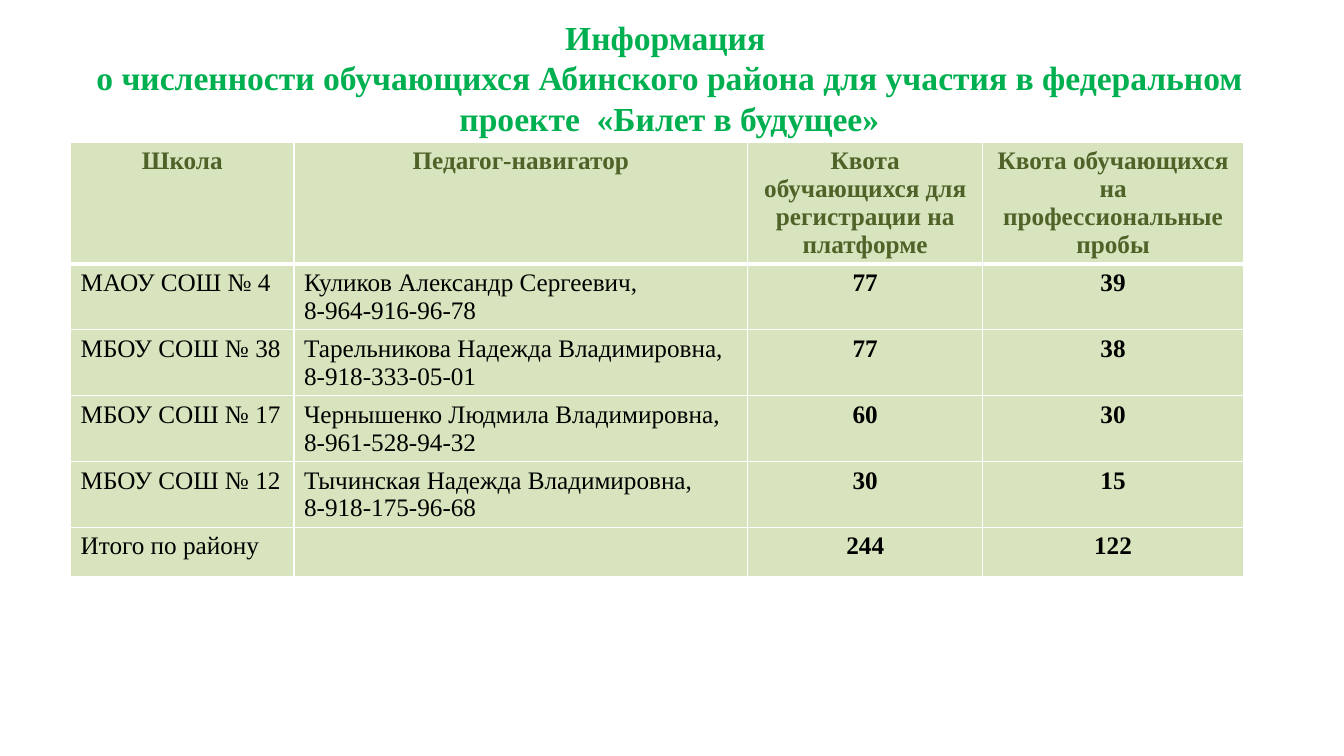
import lxml.etree
import pptx
import pptx.util
import pptx.dml.color
import pptx.enum.text
import pptx.oxml.ns

Cm, Pt = pptx.util.Cm, pptx.util.Pt
ALIGN = pptx.enum.text.PP_ALIGN
FONT = "Times New Roman"
COLORS = {
    "title": "00B050", "header": "4F6228", "body": "000000",
    "cell": "D7E4BD", "border": "FFFFFF",
}

TITLE = [
    "Информация ",
    "о численности обучающихся Абинского района для участия в федеральном "
    "проекте  «Билет в будущее»",
]
HEADER = [
    "Школа",
    "Педагог-навигатор",
    "Квота обучающихся для регистрации на платформе",
    "Квота обучающихся на профессиональные пробы",
]
SCHOOLS = [
    ["МАОУ СОШ № 4", "Куликов Александр Сергеевич,\n8-964-916-96-78", "77", "39"],
    ["МБОУ СОШ № 38", "Тарельникова Надежда Владимировна,\n8-918-333-05-01", "77", "38"],
    ["МБОУ СОШ № 17", "Чернышенко Людмила Владимировна,\n8-961-528-94-32", "60", "30"],
    ["МБОУ СОШ № 12", "Тычинская Надежда Владимировна,\n8-918-175-96-68", "30", "15"],
    ["Итого по району", "", "244", "122"],
]
COLUMN_WIDTHS = [5.63, 11.43, 5.93, 6.56]
HEADER_HEIGHT, ROW_HEIGHT = 2.34, 1.24
FIRST_QUOTA_COLUMN = 2


def rgb(name):
    return pptx.dml.color.RGBColor.from_string(COLORS[name])


def add_span(para, text, size, color, bold):
    span = para.add_run()
    span.text = text
    span.font.name = FONT
    span.font.size = Pt(size)
    span.font.bold = bold
    span.font.color.rgb = rgb(color)


def fill_title(box):
    box.left, box.top, box.width, box.height = Cm(1.02), Cm(0.43), Cm(31.7), Cm(3.07)
    frame = box.text_frame
    frame.margin_left = frame.margin_top = frame.margin_right = frame.margin_bottom = 0
    frame.vertical_anchor = pptx.enum.text.MSO_ANCHOR.TOP
    frame.word_wrap = True
    para = frame.paragraphs[0]
    para.alignment = ALIGN.CENTER
    for number, line in enumerate(TITLE):
        if number:
            para.add_line_break()
        add_span(para, line, 24, "title", True)


def set_borders(cell, widths):
    """Draw the cell's edges; widths maps lnL, lnR, lnT, lnB, in that order, to points."""
    qn = pptx.oxml.ns.qn
    properties = cell._tc.get_or_add_tcPr()
    for position, (edge, width) in enumerate(widths.items()):
        line = lxml.etree.Element(qn(f"a:{edge}"), w=str(Pt(width)))
        solid = lxml.etree.SubElement(line, qn("a:solidFill"))
        lxml.etree.SubElement(solid, qn("a:srgbClr"), val=COLORS["border"])
        properties.insert(position, line)


def fill_cell(cell, text, color, bold, centred):
    cell.fill.solid()
    cell.fill.fore_color.rgb = rgb("cell")
    if not text:
        return
    for number, line in enumerate(text.split("\n")):
        frame = cell.text_frame
        para = frame.add_paragraph() if number else frame.paragraphs[0]
        para.alignment = ALIGN.CENTER if centred else ALIGN.LEFT
        add_span(para, line, 18, color, bold)


def add_quota_table(page):
    rows = [HEADER] + SCHOOLS
    heights = [HEADER_HEIGHT] + [ROW_HEIGHT] * len(SCHOOLS)
    table = page.shapes.add_table(
        len(rows), len(HEADER), Cm(1.78), Cm(3.58),
        Cm(sum(COLUMN_WIDTHS)), Cm(sum(heights)),
    ).table
    for column, width in zip(table.columns, COLUMN_WIDTHS):
        column.width = Cm(width)
    for r, (texts, height) in enumerate(zip(rows, heights)):
        table.rows[r].height = Cm(height)
        widths = {
            "lnL": 1, "lnR": 1,
            "lnT": 3 if r == 1 else 1,
            "lnB": 3 if r == 0 else 1,
        }
        for c, text in enumerate(texts):
            cell = table.cell(r, c)
            strong = r == 0 or c >= FIRST_QUOTA_COLUMN
            color = "body" if r else "header"
            fill_cell(cell, text, color, strong, strong)
            set_borders(cell, widths)


def main():
    deck = pptx.Presentation()
    deck.slide_width, deck.slide_height = Cm(33.87), Cm(19.05)
    page = deck.slides.add_slide(deck.slide_layouts[5])
    fill_title(page.shapes.title)
    add_quota_table(page)
    deck.save("out.pptx")


if __name__ == "__main__":
    main()
